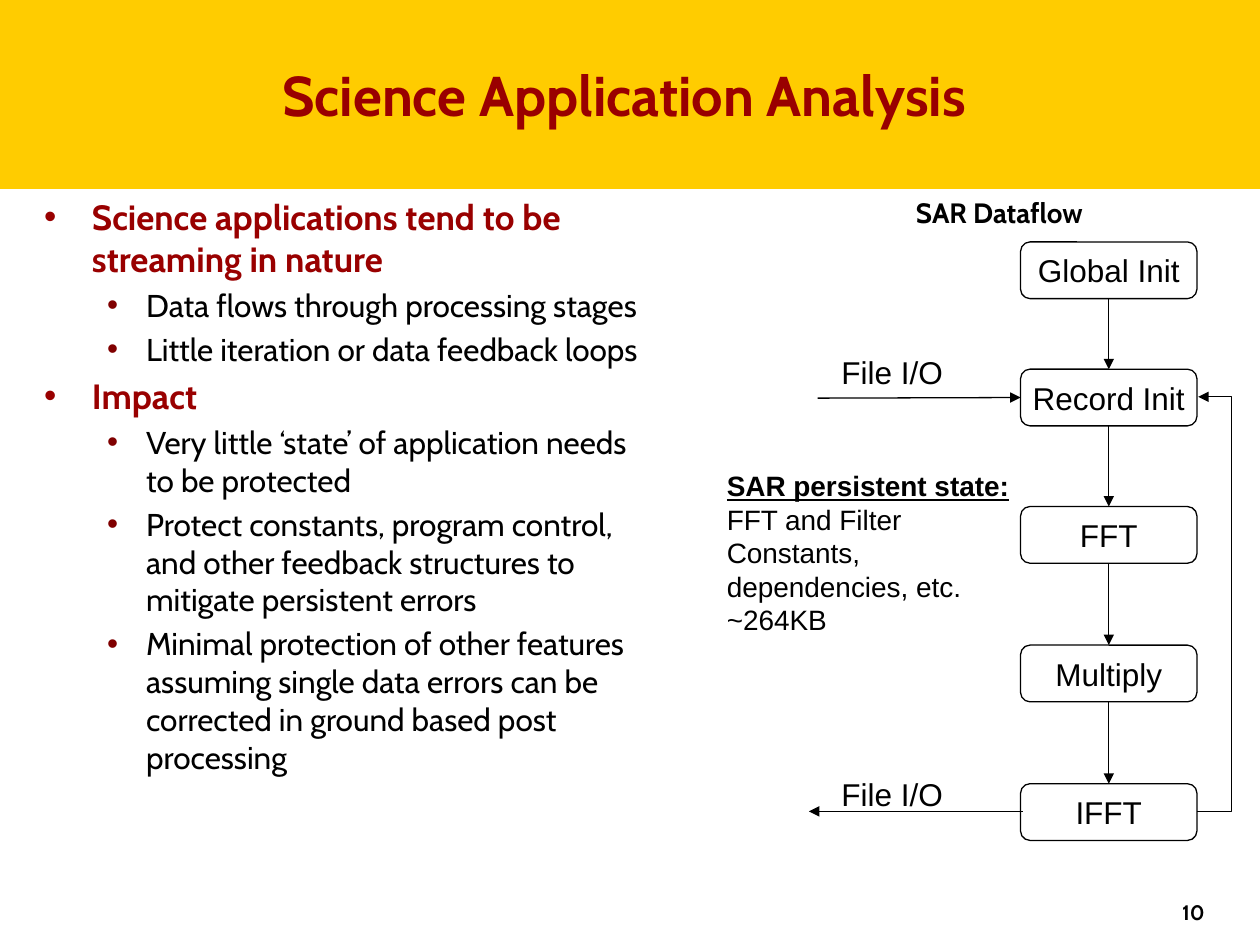
import pptx
import pptx.util
import pptx.dml.color
import pptx.enum.shapes
import pptx.enum.text
import pptx.oxml
import pptx.oxml.ns
from lxml import etree

Inches = pptx.util.Inches
Pt = pptx.util.Pt
ALIGN = pptx.enum.text.PP_ALIGN
ANCHOR = pptx.enum.text.MSO_ANCHOR
SHAPE = pptx.enum.shapes.MSO_SHAPE
CONNECTOR = pptx.enum.shapes.MSO_CONNECTOR

TITLE = "Science Application Analysis "
BULLETS = [
    (0, "Science applications tend to be streaming in nature"),
    (1, "Data flows through processing stages"),
    (1, "Little iteration or data feedback loops"),
    (0, "Impact"),
    (1, "Very little ‘state’ of application needs to be protected"),
    (1, "Protect constants, program control, and other feedback structures to mitigate persistent errors"),
    (1, "Minimal protection of other features assuming single data errors can be corrected in ground based post processing"),
]
LEVELS = [
    dict(size=20, color="990000", bold=True, bullet="990000", margin=0.38, hanging=0.38),
    dict(size=18, color="000000", bold=False, bullet="800000", margin=0.81, hanging=0.31),
]
STAGES = [("Global Init", 1.92), ("Record Init", 2.93), ("FFT", 4.02), ("Multiply", 5.12), ("IFFT", 6.22)]
STAGE_LEFT, STAGE_WIDTH, STAGE_HEIGHT = 8.1, 1.4, 0.45
STAGE_RIGHT = STAGE_LEFT + STAGE_WIDTH
STAGE_CENTER = STAGE_LEFT + STAGE_WIDTH / 2
INPUT_Y, OUTPUT_Y = 3.16, 6.44
LOOP_WIDTH, LOOP_REACH = 0.01, 0.28


def rgb(value):
    return pptx.dml.color.RGBColor.from_string(value)


def add_xml(parent, tag, **attributes):
    return etree.SubElement(parent, pptx.oxml.ns.qn(tag), **attributes)


def style(paragraph, size, name, color="000000", bold=False, align=None):
    paragraph.alignment = align
    font = paragraph.font
    font.size, font.name, font.bold = Pt(size), name, bold
    font.color.rgb = rgb(color)


def place(shape, left, top, width, height):
    shape.left, shape.top = Inches(left), Inches(top)
    shape.width, shape.height = Inches(width), Inches(height)


def add_text(slide, box, lines, size, name, wrap=True, bold=False, align=None):
    shape = slide.shapes.add_textbox(*map(Inches, box))
    frame = shape.text_frame
    frame.word_wrap = wrap
    frame.text = "\n".join(lines)
    for paragraph in frame.paragraphs:
        style(paragraph, size, name, bold=bold, align=align)
    return frame


def add_line(slide, start, end, arrow="a:tailEnd", kind=CONNECTOR.STRAIGHT):
    connector = slide.shapes.add_connector(kind, *map(Inches, start + end))
    connector.line.color.rgb = rgb("000000")
    connector.line.width = Pt(0.75)
    add_xml(connector.line._get_or_add_ln(), arrow, type="triangle")
    add_xml(connector._element.spPr, "a:effectLst")
    return connector


def add_stage(slide, label, top):
    shape = slide.shapes.add_shape(
        SHAPE.ROUNDED_RECTANGLE, Inches(STAGE_LEFT), Inches(top), Inches(STAGE_WIDTH), Inches(STAGE_HEIGHT))
    shape.shadow.inherit = False
    shape.fill.background()
    shape.line.color.rgb = rgb("000000")
    shape.line.width = Pt(0.75)
    frame = shape.text_frame
    frame.word_wrap = False
    frame.vertical_anchor = ANCHOR.MIDDLE
    frame.text = label
    style(frame.paragraphs[0], 18, "Arial", align=ALIGN.CENTER)
    return shape


def fill_header(slide):
    band = slide.shapes.add_shape(SHAPE.RECTANGLE, 0, 0, Inches(10), Inches(1.5))
    band.shadow.inherit = False
    band.fill.solid()
    band.fill.fore_color.rgb = rgb("FFCC00")
    band.line.fill.background()
    slide.shapes.element.insert(2, band._element)

    title = slide.shapes.title
    place(title, 1.67, 0.33, 6.67, 0.83)
    frame = title.text_frame
    frame.auto_size = pptx.enum.text.MSO_AUTO_SIZE.NONE
    frame.vertical_anchor = ANCHOR.MIDDLE
    frame.text = TITLE
    style(frame.paragraphs[0], 32, "Cabin", "990000", True, ALIGN.CENTER)


def fill_body(slide):
    body = slide.placeholders[1]
    place(body, 0.25, 1.5, 5.08, 5.15)
    frame = body.text_frame
    frame.auto_size = pptx.enum.text.MSO_AUTO_SIZE.NONE
    frame.text = "\n".join(text for _, text in BULLETS)
    for index, (paragraph, (level, _)) in enumerate(zip(frame.paragraphs, BULLETS)):
        look = LEVELS[level]
        paragraph.level = level
        paragraph.space_before = Pt(look["size"] * 0.2 if index else 0)
        properties = paragraph._p.get_or_add_pPr()
        properties.set("marL", str(Inches(look["margin"])))
        properties.set("indent", str(-Inches(look["hanging"])))
        add_xml(add_xml(properties, "a:buClr"), "a:srgbClr", val=look["bullet"])
        add_xml(properties, "a:buFont", typeface="Arial")
        add_xml(properties, "a:buChar", char="•")
        style(paragraph, look["size"], "Cabin", look["color"], look["bold"])


def draw_dataflow(slide):
    stages = [add_stage(slide, label, top) for label, top in STAGES]

    loop = add_line(slide, (STAGE_RIGHT, OUTPUT_Y), (STAGE_RIGHT + LOOP_WIDTH, 3.15), kind=CONNECTOR.ELBOW)
    guides = loop._element.spPr.find(pptx.oxml.ns.qn("a:prstGeom")).get_or_add_avLst()
    add_xml(guides, "a:gd", name="adj1", fmla=f"val {round(LOOP_REACH / LOOP_WIDTH * 100000)}")

    for upper, lower, (_, top), (_, next_top) in zip(stages, stages[1:], STAGES, STAGES[1:]):
        flow = add_line(slide, (STAGE_CENTER, top + STAGE_HEIGHT), (STAGE_CENTER, next_top))
        flow.begin_connect(upper, 2)
        flow.end_connect(lower, 0)

    file_input = add_line(slide, (6.49, INPUT_Y), (STAGE_LEFT, INPUT_Y))
    file_input.end_connect(stages[1], 1)
    add_line(slide, (6.42, OUTPUT_Y), (8.12, OUTPUT_Y), arrow="a:headEnd")
    for top in (2.75, 6.1):
        add_text(slide, (6.58, top, 1.01, 0.4), ["File I/O"], 18, "Arial", wrap=False)

    state = add_text(
        slide, (5.67, 3.67, 2.5, 1.45),
        ["SAR persistent state:", "FFT and Filter Constants, dependencies, etc. ~264KB"], 16, "Arial")
    heading = state.paragraphs[0].runs[0].font
    heading.bold = heading.underline = True
    add_text(slide, (7.17, 1.5, 2.08, 0.37), ["SAR Dataflow"], 16, "Cabin", bold=True)


def main():
    presentation = pptx.Presentation()
    presentation.slide_width, presentation.slide_height = Inches(10), Inches(7.5)
    slide = presentation.slides.add_slide(presentation.slide_layouts[1])
    fill_header(slide)
    fill_body(slide)
    add_text(slide, (7.58, 7.09, 2.08, 0.33), ["10"], 12, "Cabin", bold=True, align=ALIGN.RIGHT)
    draw_dataflow(slide)
    presentation.save("out.pptx")


if __name__ == "__main__":
    main()
